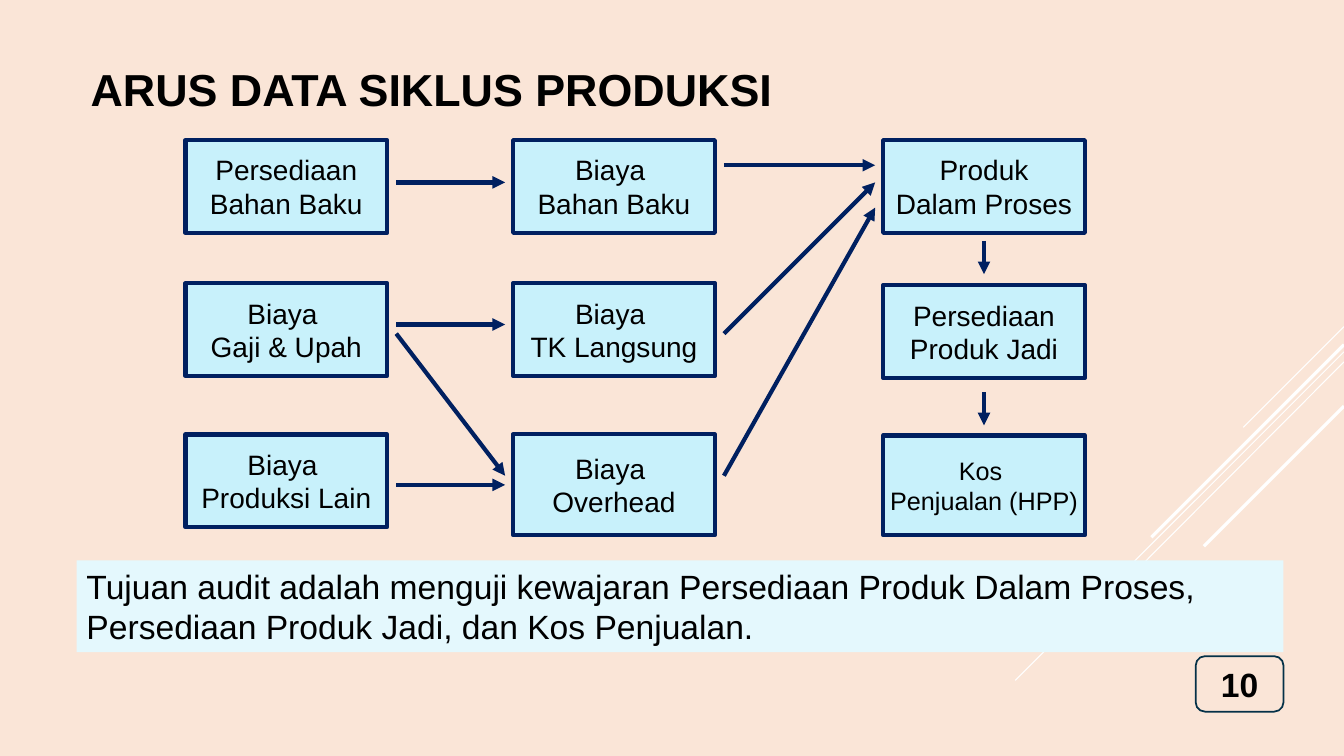
from dataclasses import dataclass

from lxml import etree
from pptx import Presentation
from pptx.dml.color import RGBColor
from pptx.enum.shapes import MSO_CONNECTOR, MSO_SHAPE
from pptx.enum.text import MSO_ANCHOR, PP_ALIGN
from pptx.oxml.ns import qn
from pptx.util import Inches, Pt

RECTANGLE = MSO_SHAPE.RECTANGLE
ROUNDED = MSO_SHAPE.ROUNDED_RECTANGLE
STRAIGHT = MSO_CONNECTOR.STRAIGHT
MIDDLE, TOP = MSO_ANCHOR.MIDDLE, MSO_ANCHOR.TOP
LEFT, CENTER = PP_ALIGN.LEFT, PP_ALIGN.CENTER


@dataclass(frozen=True)
class Theme:
    font: str = "Arial"
    background: str = "FAE5D7"
    text: str = "000000"
    navy: str = "002060"
    box: str = "C8F1FB"
    band: str = "E4F8FD"
    badge: str = "043148"
    streak: str = "FFFFFF"
    title_size: int = 32
    body_size: int = 24
    box_size: int = 20
    small_size: int = 18


class FlowSlide:
    def __init__(self, presentation, theme):
        self.theme = theme
        self.slide = presentation.slides.add_slide(presentation.slide_layouts[6])
        fill = self.slide.background.fill
        fill.solid()
        fill.fore_color.rgb = RGBColor.from_string(theme.background)

    def label(self, shape, text, size, align=LEFT, anchor=MIDDLE, bold=False, wrap=True):
        text_frame = shape.text_frame
        text_frame.text = text
        text_frame.word_wrap = wrap
        text_frame.vertical_anchor = anchor
        for paragraph in text_frame.paragraphs:
            paragraph.alignment = align
            for run in paragraph.runs:
                run.font.name = self.theme.font
                run.font.size = Pt(size)
                run.font.bold = bold
                run.font.color.rgb = RGBColor.from_string(self.theme.text)

    def title(self, text, left, top, width, height):
        shape = self.slide.shapes.add_textbox(
            Inches(left), Inches(top), Inches(width), Inches(height))
        self.label(shape, text, self.theme.title_size, bold=True)

    def panel(self, kind, left, top, width, height, fill, line=None, line_width=0):
        shape = self.slide.shapes.add_shape(
            kind, Inches(left), Inches(top), Inches(width), Inches(height))
        shape.shadow.inherit = False
        shape.fill.solid()
        shape.fill.fore_color.rgb = RGBColor.from_string(fill)
        if line:
            shape.line.color.rgb = RGBColor.from_string(line)
            shape.line.width = Pt(line_width)
        else:
            shape.line.fill.background()
        return shape

    def box(self, text, left, top, height, size):
        shape = self.panel(RECTANGLE, left, top, BOX_WIDTH, height,
                           self.theme.box, self.theme.navy, 3)
        self.label(shape, text, size, CENTER, wrap=False)

    def line(self, start, end, color, width):
        connector = self.slide.shapes.add_connector(
            STRAIGHT, *(Inches(value) for value in (*start, *end)))
        connector.line.color.rgb = RGBColor.from_string(color)
        connector.line.width = Pt(width)
        etree.SubElement(connector.element.spPr, qn("a:effectLst"))
        return connector

    def arrow(self, start, end):
        connector = self.line(start, end, self.theme.navy, 3)
        outline = connector.element.spPr.find(qn("a:ln"))
        etree.SubElement(outline, qn("a:tailEnd"), type="triangle")


BOX_WIDTH = 2
SLIDE_WIDTH = 13.33
COST_COLUMN, EXPENSE_COLUMN, PRODUCT_COLUMN = 1.84, 5.09, 8.76

# Diagonal streaks: top on the right edge, end point, line width
STREAKS = [
    (3.24, (12.33, 4.24), 0.75),
    (3.49, (10.07, 6.75), 0.75),
    (3.59, (11.26, 5.67), 0.75),
    (3.42, (11.42, 5.33), 2.25),
    (4.03, (11.94, 5.42), 2.25),
]

# Boxes by column: text, top, height
COLUMNS = {
    COST_COLUMN: [
        ("Persediaan\nBahan Baku", 1.39, 0.92),
        ("Biaya \nGaji & Upah", 2.81, 0.92),
        ("Biaya \nProduksi Lain", 4.31, 0.92),
    ],
    EXPENSE_COLUMN: [
        ("Biaya \nBahan Baku", 1.39, 0.92),
        ("Biaya \nTK Langsung", 2.81, 0.92),
        ("Biaya \nOverhead", 4.31, 1),
    ],
    PRODUCT_COLUMN: [
        ("Produk\nDalam Proses", 1.39, 0.92),
        ("Persediaan\nProduk Jadi", 2.83, 0.92),
        ("Kos \nPenjualan (HPP)", 4.32, 0.99),
    ],
}

# Arrows across each gap: left and right ends, then start and end heights
GAPS = [
    (3.93, 5.01, [(1.81, 1.81), (3.22, 3.22), (3.31, 4.72), (4.81, 4.81)]),
    (7.18, 8.68, [(1.64, 1.64), (3.31, 1.81), (4.72, 2.06)]),
]
DOWN_ARROW_TOPS = [2.39, 3.89]
DOWN_ARROW_LENGTH = 0.33


def main():
    presentation = Presentation()
    presentation.slide_width = Inches(SLIDE_WIDTH)
    presentation.slide_height = Inches(7.5)
    theme = Theme()
    flow = FlowSlide(presentation, theme)

    # Background streaks
    for top, end, width in STREAKS:
        flow.line((SLIDE_WIDTH, top), end, theme.streak, width)

    # Page number and title
    badge = flow.panel(ROUNDED, 11.86, 6.51, 0.87, 0.55,
                       theme.background, theme.badge, 1.25)
    flow.label(badge, "10", theme.body_size, CENTER, bold=True)
    flow.title("ARUS DATA SIKLUS PRODUKSI", 0.8, 0.52, 9.33, 0.71)

    # Flow boxes
    for left, boxes in COLUMNS.items():
        for text, top, height in boxes:
            size = theme.small_size if "HPP" in text else theme.box_size
            flow.box(text, left, top, height, size)

    # Arrows between and down the columns
    for left, right, heights in GAPS:
        for start, end in heights:
            flow.arrow((left, start), (right, end))
    center = PRODUCT_COLUMN + BOX_WIDTH / 2
    for top in DOWN_ARROW_TOPS:
        flow.arrow((center, top), (center, top + DOWN_ARROW_LENGTH))

    # Audit objective
    band = flow.panel(RECTANGLE, 0.76, 5.56, 11.97, 0.91, theme.band)
    flow.label(band, "Tujuan audit adalah menguji kewajaran Persediaan Produk Dalam Proses, "
               "Persediaan Produk Jadi, dan Kos Penjualan.", theme.body_size, anchor=TOP)

    presentation.save("out.pptx")


if __name__ == "__main__":
    main()
